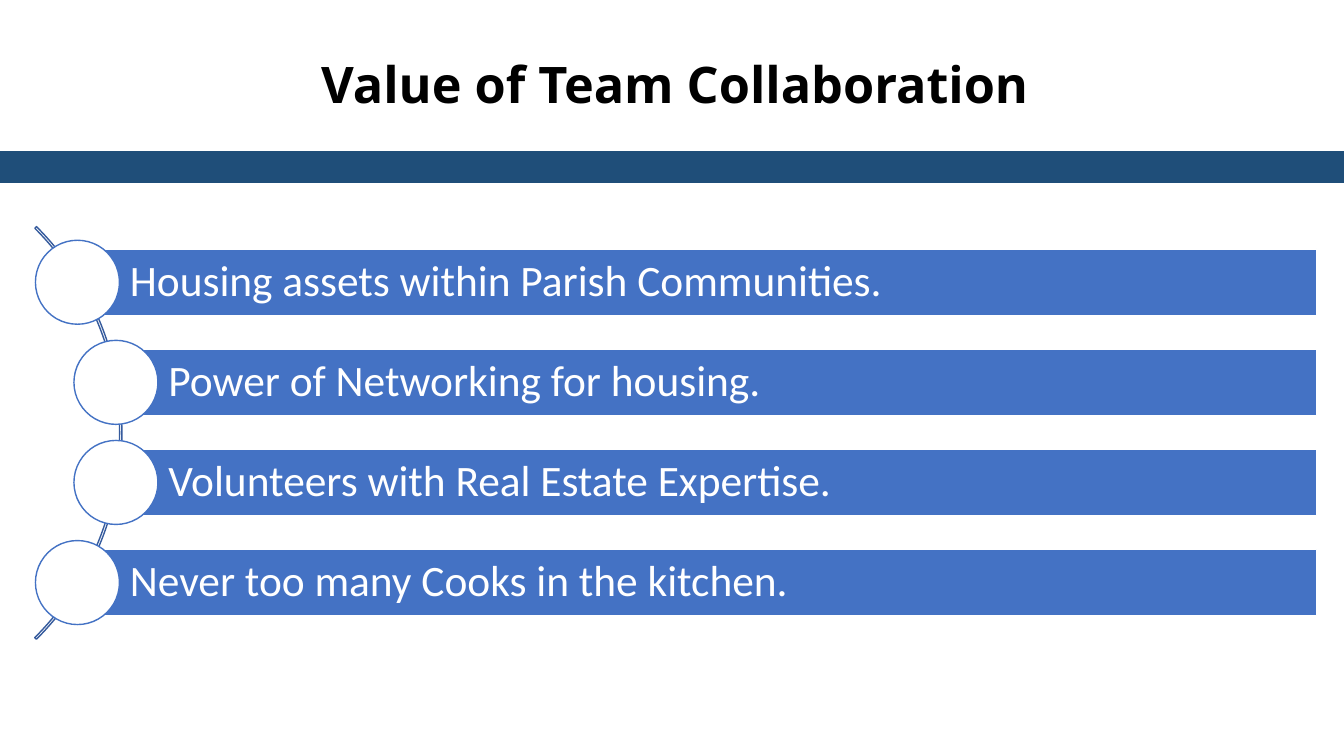
import pptx
import pptx.dml.color
import pptx.enum.shapes
import pptx.enum.text
import pptx.util

Pt = pptx.util.Pt
SHAPES = pptx.enum.shapes.MSO_SHAPE
ANCHOR = pptx.enum.text.MSO_ANCHOR
ALIGN = pptx.enum.text.PP_ALIGN

COLORS = {
    "black": "000000",
    "white": "FFFFFF",
    "band": "1F4E79",
    "bar": "4472C4",
    "arc": "365B9D",
}

SLIDE_WIDTH, SLIDE_HEIGHT = 960, 540
BAR_RIGHT, BAR_HEIGHT = 940.3, 47.5
FIRST_CENTER, ROW_PITCH = 201.6, 71.5
CIRCLE_SIZE = 60
OUTER_LEFT, INNER_LEFT = 55.3, 82.8

VALUES = [
    ("Housing assets within Parish Communities.", OUTER_LEFT),
    ("Power of Networking for housing.", INNER_LEFT),
    ("Volunteers with Real Estate Expertise.", INNER_LEFT),
    ("Never too many Cooks in the kitchen.", OUTER_LEFT),
]


def color(name):
    return pptx.dml.color.RGBColor.from_string(COLORS[name])


def set_font(paragraph, name, size, color_name, bold=False):
    paragraph.font.name = name
    paragraph.font.size = Pt(size)
    paragraph.font.bold = bold
    paragraph.font.color.rgb = color(color_name)


def add_shape(slide, kind, left, top, width, height, fill, line):
    shape = slide.shapes.add_shape(kind, Pt(left), Pt(top), Pt(width), Pt(height))
    shape.shadow.inherit = False
    if fill:
        shape.fill.solid()
        shape.fill.fore_color.rgb = color(fill)
    else:
        shape.fill.background()
    shape.line.color.rgb = color(line)
    shape.line.width = Pt(1)
    return shape


def set_title(slide, text):
    title = slide.shapes.title
    title.left, title.top, title.width, title.height = Pt(41.8), Pt(33.8), Pt(880.5), Pt(51)
    frame = title.text_frame
    frame.text = text
    frame.word_wrap = True
    frame.auto_size = pptx.enum.text.MSO_AUTO_SIZE.SHAPE_TO_FIT_TEXT
    frame.vertical_anchor = ANCHOR.MIDDLE
    paragraph = frame.paragraphs[0]
    paragraph.alignment = ALIGN.CENTER
    set_font(paragraph, "Open Sans", 36, "black", bold=True)


def add_arc(slide):
    arc = add_shape(slide, SHAPES.BLOCK_ARC, -329.8, 100.8, 416.9, 416.9, None, "arc")
    for index, value in enumerate((189, 27, 0.004)):
        arc.adjustments[index] = value


def add_value(slide, text, left, center):
    bar = add_shape(slide, SHAPES.RECTANGLE, left, center - BAR_HEIGHT / 2,
                    BAR_RIGHT - left, BAR_HEIGHT, "bar", "white")
    frame = bar.text_frame
    frame.text = text
    frame.word_wrap = True
    frame.vertical_anchor = ANCHOR.MIDDLE
    frame.margin_left = Pt(37.5)
    frame.margin_top = frame.margin_right = frame.margin_bottom = Pt(6.2)
    paragraph = frame.paragraphs[0]
    paragraph.alignment = ALIGN.LEFT
    paragraph.line_spacing = 0.9
    set_font(paragraph, "Calibri", 31, "white")

    # The circle is centred on the left edge of its bar
    add_shape(slide, SHAPES.OVAL, left - CIRCLE_SIZE / 2, center - CIRCLE_SIZE / 2,
              CIRCLE_SIZE, CIRCLE_SIZE, "white", "bar")


def main():
    presentation = pptx.Presentation()
    presentation.slide_width = Pt(SLIDE_WIDTH)
    presentation.slide_height = Pt(SLIDE_HEIGHT)
    slide = presentation.slides.add_slide(presentation.slide_layouts[5])

    # Heading and band
    set_title(slide, "Value of Team Collaboration")
    add_shape(slide, SHAPES.RECTANGLE, 0, 108, SLIDE_WIDTH, 22.3, "band", "band")

    # Values along the arc
    add_arc(slide)
    for row, (text, left) in enumerate(VALUES):
        add_value(slide, text, left, FIRST_CENTER + row * ROW_PITCH)

    presentation.save("out.pptx")


if __name__ == "__main__":
    main()
